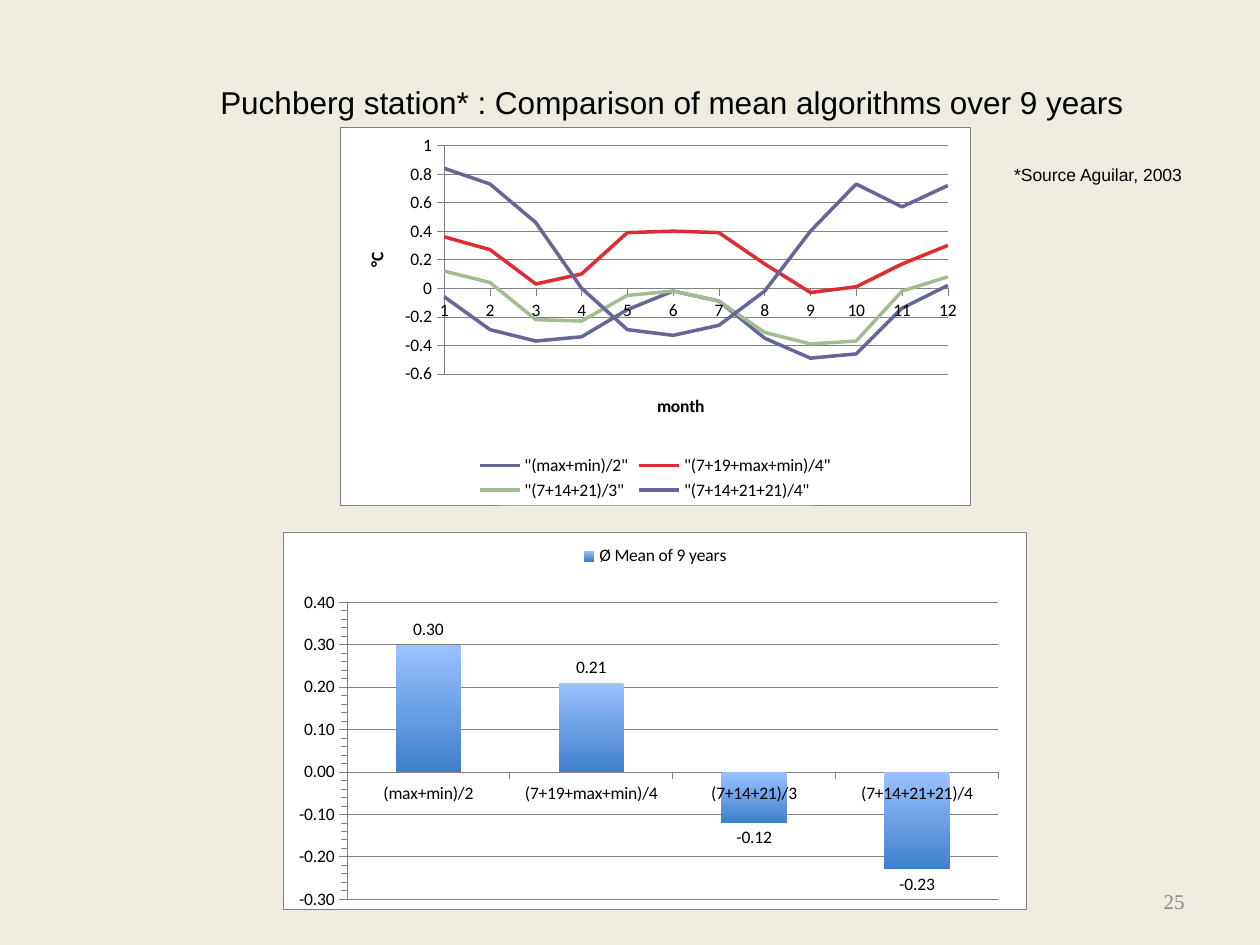
from dataclasses import dataclass

from lxml.etree import SubElement
from pptx import Presentation
from pptx.chart.data import CategoryChartData, XyChartData
from pptx.dml.color import RGBColor
from pptx.enum.chart import XL_CHART_TYPE, XL_LABEL_POSITION, XL_LEGEND_POSITION, XL_TICK_MARK
from pptx.enum.text import MSO_ANCHOR, MSO_AUTO_SIZE, PP_ALIGN
from pptx.oxml import parse_xml
from pptx.oxml.ns import nsdecls, qn
from pptx.util import Inches, Pt


@dataclass(frozen=True)
class Theme:
    background: str = "EEECE1"
    text: str = "000000"
    muted: str = "898989"
    panel: str = "FFFFFF"
    rule: str = "808080"
    violet: str = "666699"
    red: str = "DD2D32"
    green: str = "A2BD90"
    bar_top: str = "9BC1FF"
    bar_bottom: str = "3F80CD"
    text_font: str = "Arial"
    chart_font: str = "Calibri"
    number_font: str = "Times New Roman"
    title_size: int = 18
    number_size: int = 12
    small_size: int = 10
    rule_width: float = 0.25
    series_width: int = 2


class SlideBuilder:
    def __init__(self, slide, theme):
        self.slide = slide
        self.theme = theme
        fill = slide.background.fill
        fill.solid()
        fill.fore_color.rgb = RGBColor.from_string(theme.background)

    def style_font(self, font, name, size, color):
        font.name = name
        font.size = Pt(size)
        font.color.rgb = RGBColor.from_string(color)

    def add_text(self, text, box, size, font=None, color=None, align=PP_ALIGN.LEFT, fixed=False):
        shape = self.slide.shapes.add_textbox(*map(Inches, box))
        frame = shape.text_frame
        frame.word_wrap = fixed
        frame.auto_size = MSO_AUTO_SIZE.NONE if fixed else MSO_AUTO_SIZE.SHAPE_TO_FIT_TEXT
        frame.vertical_anchor = MSO_ANCHOR.MIDDLE if fixed else MSO_ANCHOR.TOP
        paragraph = frame.paragraphs[0]
        paragraph.alignment = align
        run = paragraph.add_run()
        run.text = text
        self.style_font(run.font, font or self.theme.text_font, size, color or self.theme.text)

    def style_line(self, line, color, width):
        line.color.rgb = RGBColor.from_string(color)
        line.width = Pt(width)

    def panel_properties(self, bordered):
        theme = self.theme
        border = (
            f'<a:ln w="{Pt(theme.rule_width)}"><a:solidFill><a:srgbClr val="{theme.rule}"/></a:solidFill></a:ln>'
            if bordered
            else "<a:ln><a:noFill/></a:ln>"
        )
        return parse_xml(
            f'<c:spPr {nsdecls("c", "a")}><a:solidFill><a:srgbClr val="{theme.panel}"/></a:solidFill>'
            f"{border}</c:spPr>"
        )

    def set_plot_layout(self, plot_area, position):
        for old_layout in plot_area.findall(qn("c:layout")):
            plot_area.remove(old_layout)
        layout = parse_xml(f'<c:layout {nsdecls("c")}><c:manualLayout/></c:layout>')
        settings = [("layoutTarget", "inner"), ("xMode", "edge"), ("yMode", "edge")]
        settings += zip("xywh", position)
        for name, value in settings:
            SubElement(layout[0], qn(f"c:{name}")).set("val", str(value))
        plot_area.insert(0, layout)

    def style_axis(self, axis, gridlines=False, scale=None, title=None):
        theme = self.theme
        axis.major_tick_mark = XL_TICK_MARK.OUTSIDE
        axis.minor_tick_mark = XL_TICK_MARK.NONE
        self.style_line(axis.format.line, theme.rule, theme.rule_width)
        axis.has_major_gridlines = gridlines
        if gridlines:
            self.style_line(axis.major_gridlines.format.line, theme.rule, theme.rule_width)
        if scale:
            axis.minimum_scale, axis.maximum_scale, axis.major_unit = scale
        axis.has_title = title is not None
        if title:
            run = axis.axis_title.text_frame.paragraphs[0].add_run()
            run.text = title
            self.style_font(run.font, theme.chart_font, theme.small_size, theme.text)
            run.font.bold = True

    def add_chart(self, kind, data, box, plot_position, legend_position):
        theme = self.theme
        chart = self.slide.shapes.add_chart(kind, *map(Inches, box), data).chart
        chart.has_title = False
        self.style_font(chart.font, theme.chart_font, theme.small_size, theme.text)
        chart.has_legend = True
        chart.legend.position = legend_position
        chart.legend.include_in_layout = False
        chart.plots[0].vary_by_categories = False
        chart_element = chart.element.find(qn("c:chart"))
        chart_element.addnext(self.panel_properties(True))
        plot_area = chart_element.find(qn("c:plotArea"))
        self.set_plot_layout(plot_area, plot_position)
        plot_area.append(self.panel_properties(False))
        return chart

    def add_monthly_chart(self, box, all_series):
        data = XyChartData()
        for name, _, values in all_series:
            series = data.add_series(name)
            for month, value in enumerate(values, 1):
                series.add_data_point(month, value)
        chart = self.add_chart(
            XL_CHART_TYPE.XY_SCATTER_LINES_NO_MARKERS, data, box,
            (0.165, 0.048, 0.8, 0.605), XL_LEGEND_POSITION.BOTTOM,
        )
        self.style_axis(chart.category_axis, scale=(1, 12, 1), title="month")
        self.style_axis(chart.value_axis, gridlines=True, title="°C")
        for series, (_, color, _) in zip(chart.plots[0].series, all_series):
            series.smooth = False
            self.style_line(series.format.line, color, self.theme.series_width)

    def add_mean_chart(self, box, name, means):
        data = CategoryChartData(number_format="0.00")
        data.categories = list(means)
        data.add_series(name, list(means.values()))
        chart = self.add_chart(
            XL_CHART_TYPE.COLUMN_CLUSTERED, data, box,
            (0.085, 0.186, 0.877, 0.787), XL_LEGEND_POSITION.TOP,
        )
        self.style_axis(chart.category_axis)
        value_axis = chart.value_axis
        self.style_axis(value_axis, gridlines=True, scale=(-0.3, 0.4, 0.1))
        value_axis.minor_tick_mark = XL_TICK_MARK.OUTSIDE
        value_axis.tick_labels.number_format = "0.00"
        value_axis.tick_labels.number_format_is_linked = False
        plot = chart.plots[0]
        plot.gap_width = 150
        plot.has_data_labels = True
        labels = plot.data_labels
        labels.show_value = True
        labels.number_format = "0.00"
        labels.number_format_is_linked = False
        labels.position = XL_LABEL_POSITION.OUTSIDE_END
        series = plot.series[0]
        series.invert_if_negative = False
        fill = series.format.fill
        fill.gradient()
        fill.gradient_angle = 270
        for stop, color in zip(fill.gradient_stops, (self.theme.bar_top, self.theme.bar_bottom)):
            stop.color.rgb = RGBColor.from_string(color)


def main():
    theme = Theme()
    presentation = Presentation()
    presentation.slide_width = Inches(10)
    presentation.slide_height = Inches(7.5)
    slide = presentation.slides.add_slide(presentation.slide_layouts[6])
    builder = SlideBuilder(slide, theme)

    builder.add_text("25", (7.17, 6.95, 2.33, 0.4), theme.number_size, theme.number_font,
                     theme.muted, PP_ALIGN.RIGHT, fixed=True)
    builder.add_monthly_chart((2.7, 1.01, 5, 3), [
        ('"(max+min)/2"', theme.violet,
         (0.84, 0.73, 0.46, 0, -0.29, -0.33, -0.26, -0.02, 0.4, 0.73, 0.57, 0.72)),
        ('"(7+19+max+min)/4"', theme.red,
         (0.36, 0.27, 0.03, 0.1, 0.39, 0.4, 0.39, 0.17, -0.03, 0.01, 0.17, 0.3)),
        ('"(7+14+21)/3"', theme.green,
         (0.12, 0.04, -0.22, -0.23, -0.05, -0.02, -0.09, -0.31, -0.39, -0.37, -0.02, 0.08)),
        ('"(7+14+21+21)/4"', theme.violet,
         (-0.06, -0.29, -0.37, -0.34, -0.15, -0.02, -0.09, -0.35, -0.49, -0.46, -0.14, 0.02)),
    ])
    builder.add_mean_chart((2.25, 4.22, 5.9, 3), "Ø Mean of 9 years", {
        "(max+min)/2": 0.30, "(7+19+max+min)/4": 0.21, "(7+14+21)/3": -0.12, "(7+14+21+21)/4": -0.23,
    })
    builder.add_text("Puchberg station* : Comparison of mean algorithms over 9 years",
                     (1.65, 0.61, 7.44, 0.4), theme.title_size)
    builder.add_text("*Source Aguilar, 2003", (7.95, 1.25, 1.55, 0.27), theme.small_size)
    presentation.save("out.pptx")


if __name__ == "__main__":
    main()
